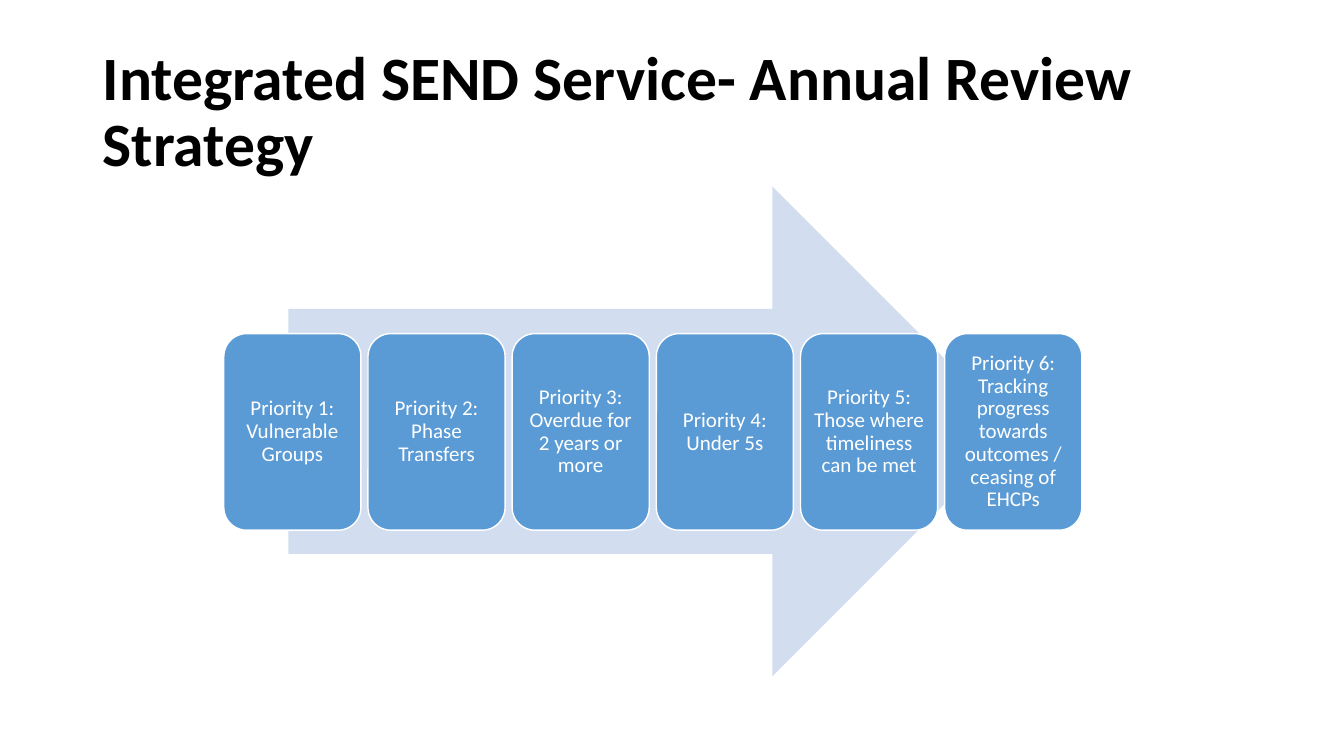
from pptx import Presentation
from pptx.dml.color import RGBColor
from pptx.enum.shapes import MSO_SHAPE
from pptx.enum.text import MSO_ANCHOR, PP_ALIGN
from pptx.util import Inches, Pt

ARROW, CARD = MSO_SHAPE.RIGHT_ARROW, MSO_SHAPE.ROUNDED_RECTANGLE
MIDDLE, CENTER = MSO_ANCHOR.MIDDLE, PP_ALIGN.CENTER
BLACK = RGBColor(0x00, 0x00, 0x00)
WHITE = RGBColor(0xFF, 0xFF, 0xFF)
BLUE = RGBColor(0x5B, 0x9B, 0xD5)
PALE_BLUE = RGBColor(0xD2, 0xDE, 0xEF)
FONT = "Calibri"

# Row of priority cards, in inches
CARD_LEFT, CARD_TOP = 2.22, 3.31
CARD_WIDTH, CARD_HEIGHT = 1.36, 1.95
CARD_PITCH = 1.43
CARD_INSET = Inches(0.06)

PRIORITIES = [
    "Vulnerable Groups",
    "Phase Transfers",
    "Overdue for 2 years or more",
    "Under 5s",
    "Those where timeliness can be met",
    "Tracking progress towards outcomes / ceasing of EHCPs",
]


def add_solid(shape_type, left, top, width, height, color):
    sp = slide.shapes.add_shape(
        shape_type, Inches(left), Inches(top), Inches(width), Inches(height))
    sp.shadow.inherit = False
    sp.fill.solid()
    sp.fill.fore_color.rgb = color
    return sp


def write(tf, text, size, color):
    """Fill a text frame with one wrapped, vertically centred paragraph."""
    tf.word_wrap = True
    tf.vertical_anchor = MIDDLE
    p = tf.paragraphs[0]
    p.text = text
    p.line_spacing = 0.9
    p.font.name = FONT
    p.font.size = Pt(size)
    p.font.color.rgb = color
    return p


prs = Presentation()
prs.slide_width, prs.slide_height = Inches(13.33), Inches(7.5)
slide = prs.slides.add_slide(prs.slide_layouts[6])

title = slide.shapes.add_textbox(
    Inches(0.92), Inches(0.4), Inches(11.5), Inches(1.45))
p = write(title.text_frame, "Integrated SEND Service- Annual Review Strategy", 44, BLACK)
p.font.bold = True

arrow = add_solid(ARROW, 2.86, 1.85, 7.23, 4.86, PALE_BLUE)
arrow.line.fill.background()

for i, priority in enumerate(PRIORITIES):
    card = add_solid(CARD, CARD_LEFT + i * CARD_PITCH, CARD_TOP,
                     CARD_WIDTH, CARD_HEIGHT, BLUE)
    card.line.color.rgb = WHITE
    card.line.width = Pt(1)
    tf = card.text_frame
    tf.margin_left = tf.margin_right = CARD_INSET
    tf.margin_top = tf.margin_bottom = CARD_INSET
    p = write(tf, f"Priority {i + 1}: {priority}", 15, WHITE)
    p.alignment = CENTER

prs.save("out.pptx")
